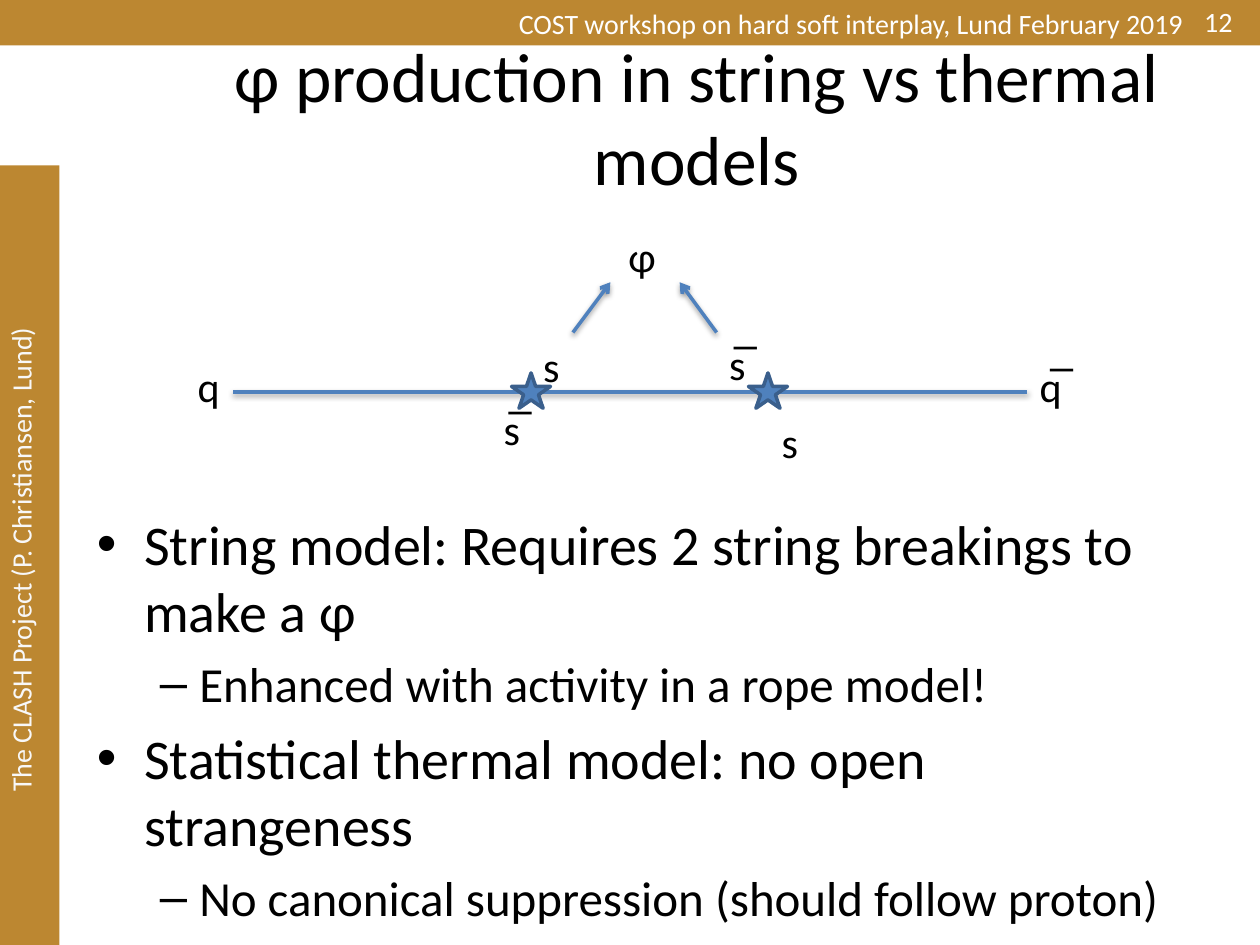
from lxml import etree
from pptx import Presentation
from pptx.dml.color import RGBColor
from pptx.enum.shapes import MSO_CONNECTOR, MSO_SHAPE
from pptx.enum.text import MSO_ANCHOR, MSO_AUTO_SIZE, PP_ALIGN
from pptx.oxml import parse_xml
from pptx.oxml.ns import nsdecls, qn
from pptx.util import Pt

LINE, STAR, RECT = MSO_CONNECTOR.STRAIGHT, MSO_SHAPE.STAR_5_POINT, MSO_SHAPE.RECTANGLE
LEFT, MID, RIGHT = PP_ALIGN.LEFT, PP_ALIGN.CENTER, PP_ALIGN.RIGHT
TOP, CENTRE = MSO_ANCHOR.TOP, MSO_ANCHOR.MIDDLE
NONE = MSO_AUTO_SIZE.NONE
FONT = "Calibri"
HEX = {"gold": "BC8731", "blue": "4F81BD", "edge": "3A5F8C",
       "black": "000000", "white": "FFFFFF", "pale": "F8F8F8"}

TITLE = "φ production in string vs thermal models"
POINTS = [
    (0, "String model: Requires 2 string breakings to make a φ"),
    (1, "Enhanced with activity in a rope model!"),
    (0, "Statistical thermal model: no open strangeness"),
    (1, "No canonical suppression (should follow proton)"),
]
SIZES = [32, 28]
EVENT = "COST workshop on hard soft interplay, Lund February 2019"
PROJECT = "The CLASH Project (P. Christiansen, Lund)"
NUMBER = "12"

BARS = [(0, 0, 720, 26), (0, 94.5, 34, 445.5)]
# Quark labels: text, left, top, width
QUARKS = [
    ("s", 303.3, 190.8, 23.6), ("s", 439.5, 234.2, 23.6),
    ("s̅", 409.5, 190, 23.6), ("s̅", 280.7, 226.8, 23.6),
    ("φ", 352, 128.3, 30.2),
    ("q", 105.8, 202.2, 27.4), ("q̅", 587, 202.2, 27.4),
]
STRING = (133.2, 224, 587, 224)
ARROWS = [(327.4, 190, 348.8, 161.3), (409.5, 190, 388.4, 161.3)]
BREAKS = [292.3, 427.7]

SHADOW = (f'<a:effectLst {nsdecls("a")}><a:outerShdw blurRad="{Pt(3.1)}" dist="{Pt(1.6)}" '
          'dir="5400000" rotWithShape="0"><a:srgbClr val="000000">'
          '<a:alpha val="38000"/></a:srgbClr></a:outerShdw></a:effectLst>')


def rgb(name):
    return RGBColor.from_string(HEX[name])


def place(shape, box):
    shape.left, shape.top, shape.width, shape.height = map(Pt, box)


def style(para, text, size=24, color="black", align=LEFT):
    para.text = text
    para.alignment = align
    para.font.name, para.font.size = FONT, Pt(size)
    para.font.color.rgb = rgb(color)


def label(slide, text, box, wrap=False, anchor=TOP, turn=0, **fmt):
    shape = slide.shapes.add_textbox(*map(Pt, box))
    shape.rotation = turn
    frame = shape.text_frame
    frame.word_wrap, frame.vertical_anchor = wrap, anchor
    style(frame.paragraphs[0], text, **fmt)


def block(slide, kind, box, fill, edge=None):
    shape = slide.shapes.add_shape(kind, *map(Pt, box))
    shape.shadow.inherit = False
    shape.fill.solid()
    shape.fill.fore_color.rgb = rgb(fill)
    if edge:
        shape.line.color.rgb, shape.line.width = rgb(edge), Pt(2)
    else:
        shape.line.fill.background()


def stroke(slide, ends, arrow=False):
    line = slide.shapes.add_connector(LINE, *map(Pt, ends))
    line.line.color.rgb, line.line.width = rgb("blue"), Pt(2)
    props = line._element.spPr
    if arrow:
        etree.SubElement(props.find(qn("a:ln")), qn("a:tailEnd"), type="arrow")
    props.append(parse_xml(SHADOW))


def fill_slots(slide):
    """Put the title and the list in the layout's placeholders."""
    title, body = slide.shapes.title, slide.placeholders[1]
    place(title, (112.3, 21.6, 571.7, 90))
    title.text_frame.auto_size = NONE
    title.text_frame.vertical_anchor = CENTRE
    style(title.text_frame.paragraphs[0], TITLE, size=39.6, align=MID)

    place(body, (48.2, 287.3, 635.8, 244))
    frame = body.text_frame
    frame.auto_size = NONE
    for i, (level, text) in enumerate(POINTS):
        para = frame.add_paragraph() if i else frame.paragraphs[0]
        para.level = level
        style(para, text, size=SIZES[level])
    frame.paragraphs[0].space_before = Pt(0)


def main():
    deck = Presentation()
    deck.slide_width, deck.slide_height = Pt(720), Pt(540)
    slide = deck.slides.add_slide(deck.slide_layouts[1])

    for bar in BARS:
        block(slide, RECT, bar, "gold")
    label(slide, PROJECT, (-129.6, 304.6, 283, 26.6), turn=270, size=16, color="pale")
    label(slide, EVENT, (289.4, 0, 399.6, 26.6), size=16, color="white")
    label(slide, NUMBER, (543.6, -2, 167.8, 28.8), wrap=True, anchor=CENTRE,
          size=16, color="white", align=RIGHT)
    fill_slots(slide)

    stroke(slide, STRING)
    for ends in ARROWS:
        stroke(slide, ends, arrow=True)
    for left in BREAKS:
        block(slide, STAR, (left, 213.1, 22.3, 20.2), "blue", "edge")
    for text, left, top, width in QUARKS:
        label(slide, text, (left, top, width, 36))

    deck.save("out.pptx")


if __name__ == "__main__":
    main()
